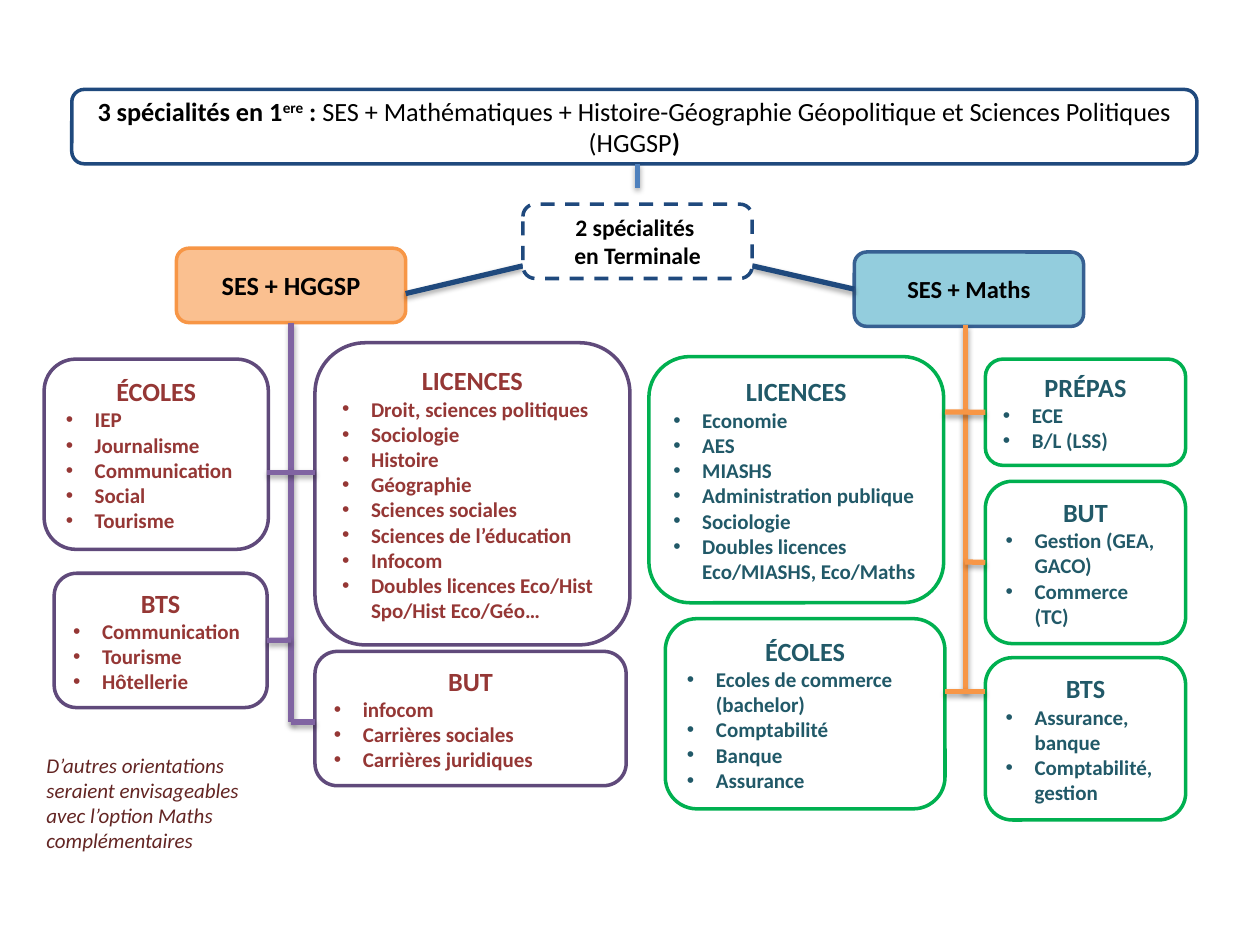
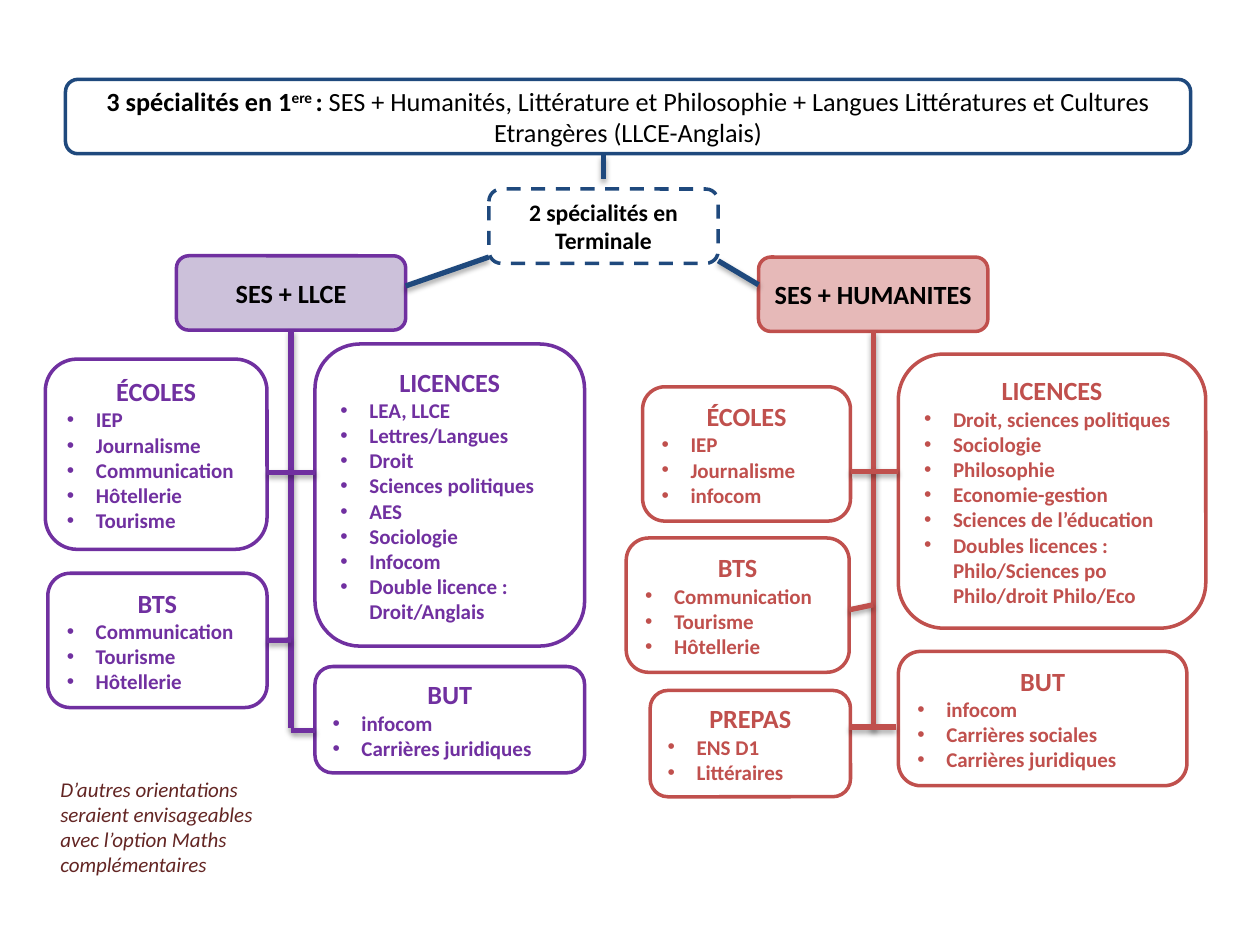
from lxml.etree import SubElement
from pptx import Presentation
from pptx.dml.color import RGBColor
from pptx.enum.dml import MSO_LINE
from pptx.enum.shapes import MSO_CONNECTOR, MSO_SHAPE
from pptx.enum.text import MSO_ANCHOR, MSO_AUTO_SIZE, PP_ALIGN
from pptx.oxml.ns import qn
from pptx.util import Inches, Pt

# Grid: 100 columns by 75 rows of a tenth of an inch
CELL = Inches(0.1)
COLS, ROWS = 100, 75
FONT = "Calibri"
NAVY, BLACK, WHITE, BROWN = "1F497D", "000000", "FFFFFF", "632523"
ORANGE, GREEN, VIOLET, RED = "F79646", "00B050", "7030A0", "C0504D"
BOX_W, BOX_H = 18.2, 5.9
HEAD_W, NOTE_W, NOTE_H = 89.3, 20.5, 9.1
INDENT = Inches(0.23)
TOP, LEFT, BOTTOM, RIGHT = range(4)
NOTE = ("D’autres orientations seraient envisageables "
        "avec l’option Maths complémentaires")


def cells(*counts):
    return [round(count * CELL) for count in counts]


def color(code):
    return RGBColor.from_string(code)


def write(frame, *parts, size=12, ink=BLACK, bold=False, italic=False,
          align=PP_ALIGN.LEFT, bullet=False):
    """Add one paragraph; a part is a text or (text, bold, raised)."""
    para = frame.add_paragraph() if frame.text else frame.paragraphs[0]
    para.alignment = align
    for part in parts:
        words, heavy, raised = (part, bold, False) if isinstance(part, str) else part
        run = para.add_run()
        run.text = words
        font = run.font
        font.name, font.size, font.bold, font.italic = FONT, Pt(size), heavy, italic
        font.color.rgb = color(ink)
        if raised:
            run._r.get_or_add_rPr().set("baseline", "30000")
    if bullet:
        props = para._p.get_or_add_pPr()
        props.set("marL", str(INDENT))
        props.set("indent", str(-INDENT))
        SubElement(props, qn("a:buFont"), typeface="Arial")
        SubElement(props, qn("a:buChar"), char="•")


def frame_box(slide, place, edge, fill=None, dash=False):
    box = slide.shapes.add_shape(MSO_SHAPE.ROUNDED_RECTANGLE, *cells(*place))
    box.shadow.inherit = False
    if fill:
        box.fill.solid()
        box.fill.fore_color.rgb = color(fill)
    else:
        box.fill.background()
    box.line.color.rgb = color(edge)
    box.line.width = Pt(2)
    if dash:
        box.line.dash_style = MSO_LINE.DASH
    box.text_frame.word_wrap = True
    box.text_frame.vertical_anchor = MSO_ANCHOR.MIDDLE
    return box


def head(slide, x, y, *parts):
    box = frame_box(slide, (x, y, HEAD_W, BOX_H), NAVY, WHITE)
    write(box.text_frame, *parts, size=15, align=PP_ALIGN.CENTER)


def label(slide, x, y, *rows, edge=NAVY, fill=WHITE, size=15, dash=False):
    box = frame_box(slide, (x, y, BOX_W, BOX_H), edge, fill, dash)
    for row in rows:
        write(box.text_frame, row, size=size, bold=True, align=PP_ALIGN.CENTER)
    return box


def card(slide, x, y, width, title, items, edge, ink, lines=None):
    """Titled list, as tall as its number of text lines asks."""
    height = 4 + 2.22 * (lines or len(items))
    box = frame_box(slide, (x, y, width, height), edge)
    frame = box.text_frame
    frame.auto_size = MSO_AUTO_SIZE.SHAPE_TO_FIT_TEXT
    write(frame, title, size=15, ink=ink, bold=True, align=PP_ALIGN.CENTER)
    for item in items:
        write(frame, item, ink=ink, bold=True, bullet=True)
    return box


def note(slide, x, y):
    box = slide.shapes.add_textbox(*cells(x, y, NOTE_W, NOTE_H))
    box.text_frame.word_wrap = True
    write(box.text_frame, NOTE, ink=BROWN, italic=True)


def link(slide, ink, start, end):
    """Draw a line; each end is a point or (box, side)."""
    points = [(0, 0) if not isinstance(tip[0], (int, float)) else tip
              for tip in (start, end)]
    line = slide.shapes.add_connector(
        MSO_CONNECTOR.STRAIGHT, *cells(*points[0], *points[1]))
    for tip, join in ((start, line.begin_connect), (end, line.end_connect)):
        if not isinstance(tip[0], (int, float)):
            join(*tip)
    line.line.color.rgb = color(ink)
    line.line.width = Pt(3)
    # Soft shadow below the line
    effects = SubElement(line._element.spPr, qn("a:effectLst"))
    shade = SubElement(effects, qn("a:outerShdw"), blurRad=str(Pt(3.1)),
                       dist=str(Pt(1.8)), dir="5400000", rotWithShape="0")
    tone = SubElement(shade, qn("a:srgbClr"), val=BLACK)
    SubElement(tone, qn("a:alpha"), val="35000")


def links(slide, ink, *pairs):
    for start, end in pairs:
        link(slide, ink, start, end)


def maths(slide):
    head(slide, 5.7, 7.1, ("3 spécialités en 1", True, False), ("ere", True, True),
         (" : ", True, False),
         "SES + Mathématiques + Histoire-Géographie Géopolitique "
         "et Sciences Politiques (HGGSP", (")", True, False))
    hggsp = label(slide, 14, 19.7, "SES + HGGSP", edge=ORANGE, fill="FAC090")
    sums = label(slide, 67.8, 20, "SES + Maths", edge="376092", fill="93CDDD", size=14)

    # Right branch cards
    look = GREEN, "215968"
    card(slide, 51.5, 28.3, 23.4, "LICENCES",
         ["Economie", "AES", "MIASHS", "Administration publique", "Sociologie",
          "Doubles licences Eco/MIASHS, Eco/Maths"], *look, lines=7)
    prep = card(slide, 78.2, 28.5, 15.9, "PRÉPAS", ["ECE", "B/L (LSS)"], *look)
    card(slide, 52.8, 49.1, 22.2, "ÉCOLES",
         ["Ecoles de commerce (bachelor)", "Comptabilité", "Banque", "Assurance"],
         *look, lines=5)
    but = card(slide, 78.2, 38.2, 15.9, "BUT",
               ["Gestion (GEA, GACO)", "Commerce (TC)"], *look, lines=4)
    card(slide, 78.2, 52.2, 15.9, "BTS",
         ["Assurance, banque", "Comptabilité, gestion"], *look, lines=4)

    # Left branch cards
    look = "604A7B", "953735"
    card(slide, 25, 27.2, 25, "LICENCES",
         ["Droit, sciences politiques", "Sociologie", "Histoire", "Géographie",
          "Sciences sociales", "Sciences de l’éducation", "Infocom",
          "Doubles licences Eco/Hist Spo/Hist Eco/Géo…"], *look, lines=9)
    card(slide, 3.5, 28.5, 17.8, "ÉCOLES",
         ["IEP", "Journalisme", "Communication", "Social", "Tourisme"], *look)
    card(slide, 25, 51.7, 24.7, "BUT",
         ["infocom", "Carrières sociales", "Carrières juridiques"], *look)
    bts = card(slide, 4.3, 45.5, 16.9, "BTS",
               ["Communication", "Tourisme", "Hôtellerie"], *look)

    # Lines
    link(slide, "4F81BD", (50.6, 13), (50.6, 14.9))
    links(slide, NAVY, ((41.5, 21.1), (32.2, 23.3)), ((sums, LEFT), (59.7, 21.1)))
    links(slide, "8064A2", ((hggsp, BOTTOM), (23.1, 57.3)),
          ((23.1, 57.3), (25, 57.3)), ((23.1, 50.8), (bts, RIGHT)),
          ((21.2, 37.5), (25, 37.5)))
    links(slide, ORANGE, ((76.6, 25.8), (76.6, 54.9)), ((78.2, 54.9), (75, 54.9)),
          ((prep, LEFT), (75, 32.7)), ((76.6, 44.6), (but, LEFT)))
    note(slide, 2.7, 59.2)
    label(slide, 41.5, 16.2, "2 spécialités ", "en Terminale", size=13.5, dash=True)


def letters(slide):
    head(slide, 5.2, 6.3, ("3 spécialités en 1", True, False), ("ere ", True, True),
         (": ", True, False),
         "SES + Humanités, Littérature et Philosophie + Langues Littératures "
         "et Cultures Etrangères (LLCE-Anglais)")
    llce = label(slide, 14, 20.3, "SES + LLCE", edge=VIOLET, fill="CCC1DA")
    label(slide, 38.8, 15, "2 spécialités en Terminale", size=13.5, dash=True)
    human = label(slide, 60.2, 20.4, "SES + HUMANITES", edge=RED, fill="E6B9B8")

    # Left branch cards
    look = VIOLET, VIOLET
    card(slide, 25, 27.3, 21.4, "LICENCES",
         ["LEA, LLCE", "Lettres/Langues", "Droit", "Sciences politiques", "AES",
          "Sociologie", "Infocom", "Double licence : Droit/Anglais"], *look, lines=9)
    card(slide, 3.6, 28.5, 17.6, "ÉCOLES",
         ["IEP", "Journalisme", "Communication", "Hôtellerie", "Tourisme"], *look)
    card(slide, 25, 52.9, 21.4, "BUT", ["infocom", "Carrières juridiques"], *look)
    bts = card(slide, 3.8, 45.5, 17.4, "BTS",
               ["Communication", "Tourisme", "Hôtellerie"], *look)

    # Right branch cards
    look = RED, RED
    card(slide, 51, 30.7, 16.5, "ÉCOLES", ["IEP", "Journalisme", "infocom"], *look)
    card(slide, 71.3, 51.7, 22.9, "BUT",
         ["infocom", "Carrières sociales", "Carrières juridiques"], *look)
    card(slide, 49.7, 42.7, 17.7, "BTS",
         ["Communication", "Tourisme", "Hôtellerie"], *look)
    card(slide, 51.6, 54.8, 15.9, "PREPAS", ["ENS D1", "Littéraires"], *look)
    card(slide, 71.3, 28.1, 24.4, "LICENCES",
         ["Droit, sciences politiques", "Sociologie", "Philosophie",
          "Economie-gestion", "Sciences de l’éducation",
          "Doubles licences : Philo/Sciences po Philo/droit Philo/Eco"],
         *look, lines=8)

    # Lines
    links(slide, NAVY, ((38.8, 20.4), (32.2, 22.7)), ((47.9, 12.3), (47.9, 14.2)),
          ((60.2, 22.6), (57, 20.7)))
    links(slide, VIOLET, ((llce, BOTTOM), (23.1, 57.8)), ((23.1, 58), (25, 58)),
          ((23.1, 50.8), (bts, RIGHT)), ((21.2, 37.5), (25, 37.5)))
    links(slide, RED, ((human, BOTTOM), (69.3, 57.9)), ((69.3, 48), (67.4, 48.4)),
          ((67.5, 37.4), (71.3, 37.4)), ((67.4, 57.7), (71.1, 57.7)))
    note(slide, 3.8, 61.1)


def main():
    deck = Presentation()
    deck.slide_width, deck.slide_height = cells(COLS, ROWS)
    for draw in (maths, letters):
        draw(deck.slides.add_slide(deck.slide_layouts[6]))
    deck.save("out.pptx")


if __name__ == "__main__":
    main()
